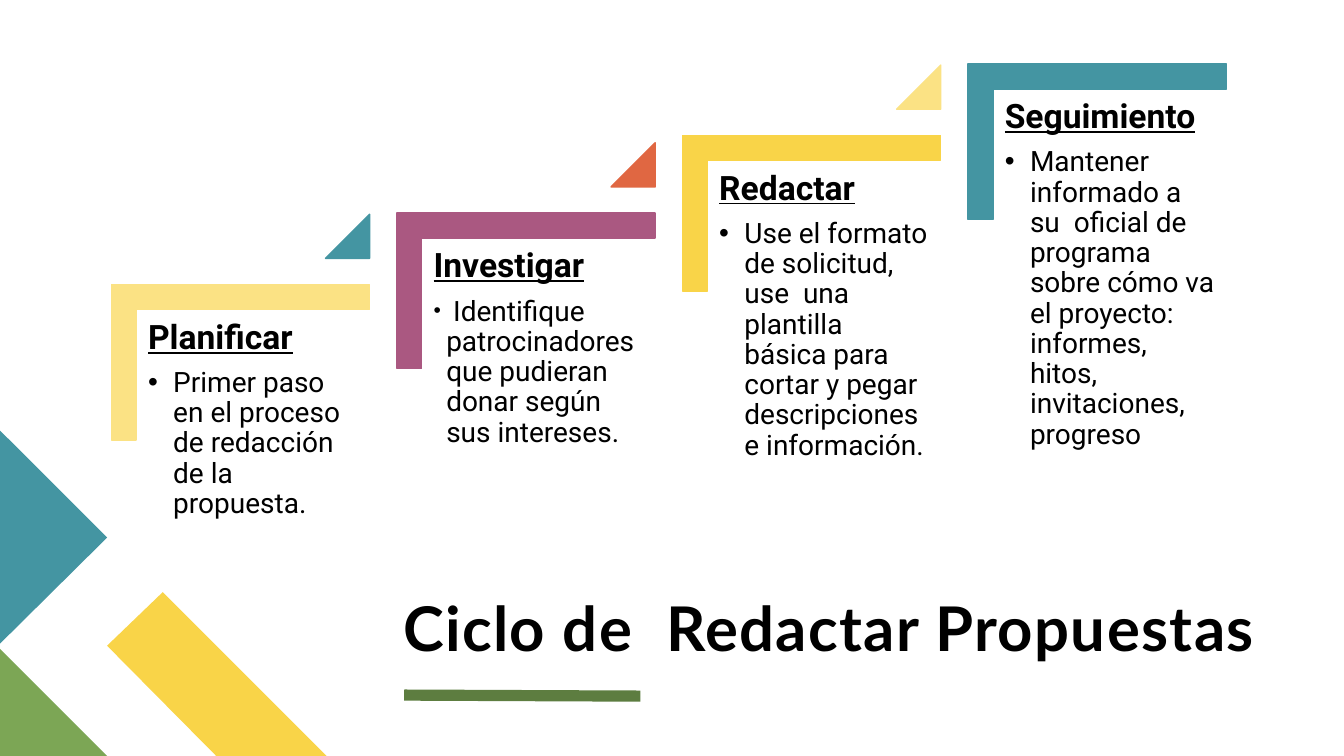
import dataclasses

import lxml.etree
import pptx
import pptx.dml.color
import pptx.enum.shapes
import pptx.enum.text
import pptx.oxml.ns
import pptx.util

PX = 9525
SHAPES = pptx.enum.shapes.MSO_SHAPE
ANCHORS = pptx.enum.text.MSO_ANCHOR


@dataclasses.dataclass(frozen=True)
class Theme:
    """Colours, fonts and type sizes of the slide."""

    ink: str = "000000"
    teal: str = "4495A2"
    green: str = "7CA655"
    dark_green: str = "5D7D40"
    yellow: str = "F9D448"
    pale_yellow: str = "FBE284"
    plum: str = "AA5881"
    orange: str = "E06742"
    title_font: str = "Lato"
    body_font: str = "Roboto"
    title_size: int = 44
    heading_size: int = 24
    body_size: int = 20


@dataclasses.dataclass(frozen=True)
class Box:
    """A rectangle in px."""

    left: int
    top: int
    width: int
    height: int

    def inner(self, left, top, width, height):
        """Return a box placed relative to this one."""
        return Box(self.left + left, self.top + top, width, height)

    def emu(self):
        """Return left, top, width and height in EMU."""
        return [round(value * PX) for value in dataclasses.astuple(self)]


@dataclasses.dataclass(frozen=True)
class Step:
    """One stage of the cycle."""

    top: int
    color: str
    heading: str
    body: str
    indent: int = 24
    bullet_percent: int = 100
    marker: str = ""


THEME = Theme()
PAGE = Box(0, 0, 1280, 720)
STEPS = [
    Step(271, THEME.pale_yellow, "Planificar",
         "Primer paso en el proceso de redacción de la propuesta.",
         marker=THEME.teal),
    Step(203, THEME.plum, "Investigar",
         " Identifique patrocinadores que pudieran donar según sus intereses.",
         indent=12, bullet_percent=75, marker=THEME.orange),
    Step(129, THEME.yellow, "Redactar",
         "Use el formato de solicitud, use  una plantilla básica para cortar "
         "y pegar descripciones e información.", marker=THEME.pale_yellow),
    Step(61, THEME.teal, "Seguimiento",
         "Mantener informado a su  oficial de programa sobre cómo va el "
         "proyecto: informes, hitos,  invitaciones, progreso"),
]


def rgb(color):
    """Turn a hex string into a colour."""
    return pptx.dml.color.RGBColor.from_string(color)


def apply(target, values):
    """Set each attribute named in the dict."""
    for name, value in values.items():
        setattr(target, name, value)


def paint(shape, color, outline=True):
    """Give a shape a flat fill, with or without an outline of its colour."""
    shape.shadow.inherit = False
    shape.fill.solid()
    shape.fill.fore_color.rgb = rgb(color)
    if outline:
        shape.line.color.rgb = rgb(color)
        shape.line.width = pptx.util.Pt(1)
    else:
        shape.line.fill.background()


def prepare_frame(frame, anchor, inset):
    """Set wrapping, anchor and equal insets of a text frame."""
    margins = {f"margin_{side}": inset * PX
               for side in ("left", "top", "right", "bottom")}
    apply(frame, {"word_wrap": True, "vertical_anchor": anchor,
                  "auto_size": pptx.enum.text.MSO_AUTO_SIZE.NONE, **margins})


def write(para, text, layout, font):
    """Fill a paragraph with one formatted span and return the span."""
    apply(para, {"alignment": pptx.enum.text.PP_ALIGN.LEFT, **layout})
    span = para.add_run()
    span.text = text
    apply(span.font, font)
    span.font.color.rgb = rgb(THEME.ink)
    return span


def add_bullet(para, indent, percent):
    """Give a paragraph a hanging round bullet."""
    properties = para._p.get_or_add_pPr()
    properties.set("marL", str(indent * PX))
    properties.set("indent", str(-indent * PX))
    for tag, name, value in (("a:buSzPct", "val", str(percent * 1000)),
                             ("a:buFont", "typeface", "Arial"),
                             ("a:buChar", "char", "•")):
        lxml.etree.SubElement(properties, pptx.oxml.ns.qn(tag)).set(name, value)


def draw_corner_art(page, box):
    """Draw the coloured outlines in the lower left corner of the box."""
    outlines = [
        (THEME.yellow, [(311, 0), (206, 0), (102, -105), (155, -156)]),
        (THEME.green, [(102, 0), (0, 0), (0, -102)]),
        (THEME.teal, [(0, -310), (102, -208), (0, -107)]),
    ]
    bottom = box.top + box.height
    for color, offsets in outlines:
        points = [(box.left + x, bottom + y) for x, y in offsets]
        builder = page.shapes.build_freeform(*points[0], scale=PX)
        builder.add_line_segments(points[1:], close=True)
        paint(builder.convert_to_shape(), color, outline=False)


def draw_title(page, box):
    """Place the title and the rule below it."""
    title = page.shapes.title
    apply(title, dict(zip(("left", "top", "width", "height"), box.emu())))
    prepare_frame(title.text_frame, ANCHORS.BOTTOM, 0)
    span = write(title.text_frame.paragraphs[0], "Ciclo de  Redactar Propuestas",
                 {"line_spacing": 0.8},
                 {"name": THEME.title_font, "bold": True,
                  "size": pptx.util.Pt(THEME.title_size)})
    span.font._element.set("spc", "100")

    left, top, width, height = box.inner(1, box.height + 30, 225, 1).emu()
    rule = page.shapes.add_connector(
        pptx.enum.shapes.MSO_CONNECTOR.STRAIGHT,
        left, top, left + width, top + height)
    rule.line.color.rgb = rgb(THEME.dark_green)
    rule.line.width = pptx.util.Pt(8)
    lxml.etree.SubElement(rule._element.spPr, pptx.oxml.ns.qn("a:effectLst"))


def draw_step(page, box, step):
    """Draw one stage: corner bracket, text and the marker to the next one."""
    shift = (box.width - box.height) // 2
    upright = box.inner(shift, -shift, box.height, box.width)
    bracket = page.shapes.add_shape(SHAPES.CORNER, *upright.emu())
    bracket.rotation = 90
    for index in range(2):
        bracket.adjustments[index] = 0.16
    paint(bracket, step.color)

    frame = page.shapes.add_textbox(*box.inner(25, 24, 222, 195).emu()).text_frame
    prepare_frame(frame, ANCHORS.TOP, 10)
    write(frame.paragraphs[0], step.heading,
          {"line_spacing": 0.9, "space_after": pptx.util.Pt(8.4)},
          {"name": THEME.body_font, "size": pptx.util.Pt(THEME.heading_size),
           "bold": True, "underline": True})
    para = frame.add_paragraph()
    write(para, step.body,
          {"level": 1, "line_spacing": 0.9, "space_after": pptx.util.Pt(3)},
          {"name": THEME.body_font, "size": pptx.util.Pt(THEME.body_size)})
    add_bullet(para, step.indent, step.bullet_percent)

    if step.marker:
        marker = page.shapes.add_shape(SHAPES.ISOSCELES_TRIANGLE,
                                       *box.inner(204, -67, 42, 42).emu())
        marker.adjustments[0] = 1
        paint(marker, step.marker)


def main():
    """Build and save the deck."""
    deck = pptx.Presentation()
    deck.slide_width, deck.slide_height = PAGE.emu()[2:]
    page = deck.slides.add_slide(deck.slide_layouts.get_by_name("Title Only"))
    draw_corner_art(page, PAGE)
    draw_title(page, PAGE.inner(384, 487, 833, 145))
    for index, step in enumerate(STEPS):
        draw_step(page, PAGE.inner(106 + 272 * index, step.top, 246, 148), step)
    deck.save("out.pptx")


if __name__ == "__main__":
    main()
